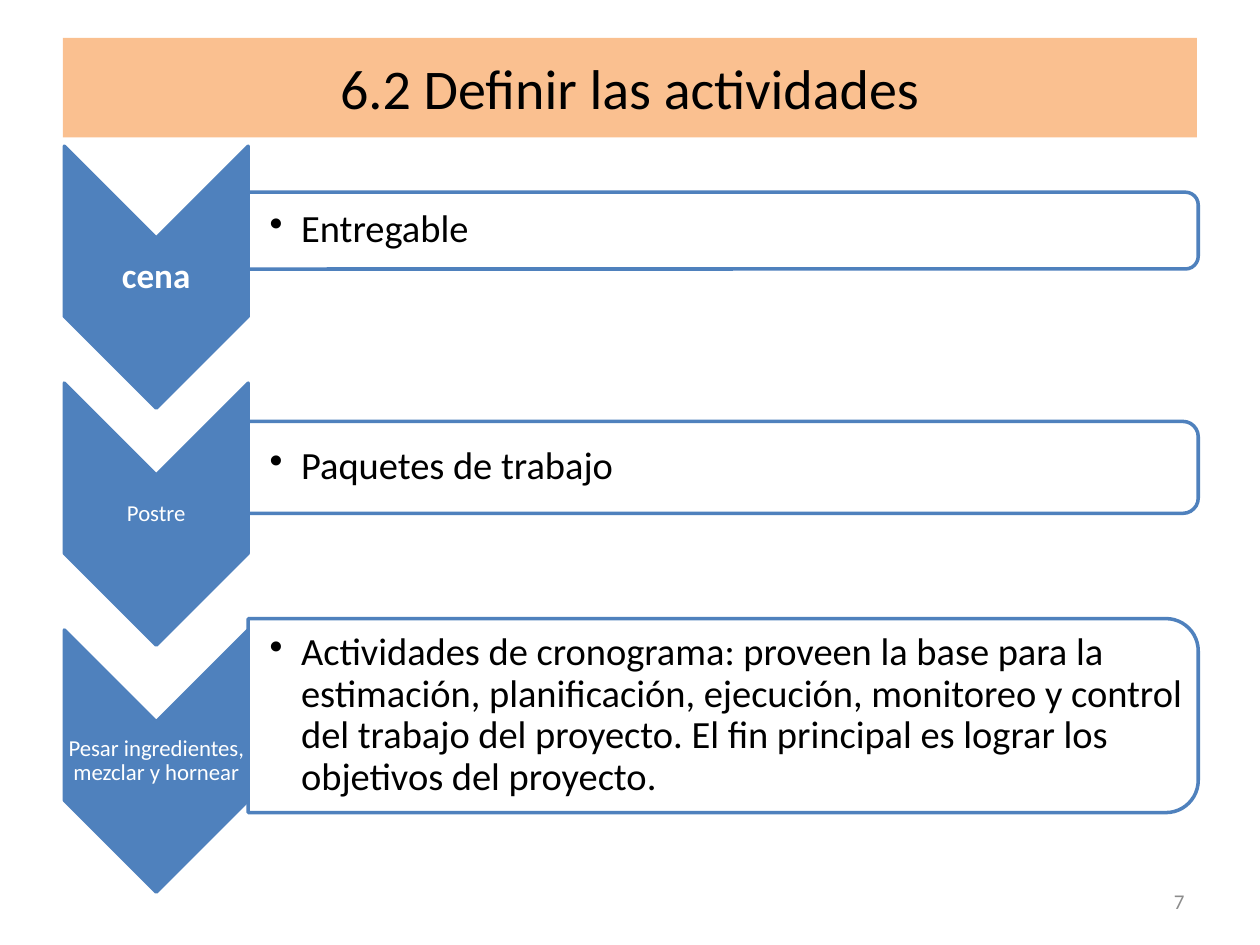
from lxml import etree
from pptx import Presentation
from pptx.dml.color import RGBColor
from pptx.enum import shapes, text
from pptx.oxml import ns
from pptx.util import Inches, Pt

BLUE = RGBColor(0x4F, 0x81, 0xBD)
PEACH = RGBColor(0xFA, 0xC0, 0x90)
WHITE = RGBColor(0xFF, 0xFF, 0xFF)
BLACK = RGBColor(0, 0, 0)
GRAY = RGBColor(0x8C, 0x8C, 0x8C)

TITLE = "6.2 Definir las actividades"
PAGE_NUMBER = "7"
# label, label size, bold, chevron centre, detail, panel centre, panel height, text width
STEPS = [
    ("cena", 20, True, 2.2, "Entregable", 1.83, 0.61, 7.51),
    ("Postre", 13, False, 4.08, "Paquetes de trabajo", 3.71, 0.73, 7.51),
    ("Pesar ingredientes, mezclar y hornear", 13, False, 6.04,
     "Actividades de cronograma: proveen la base para la estimación, planificación, "
     "ejecución, monitoreo y control del trabajo del proyecto. El fin principal es "
     "lograr los objetivos del proyecto.", 5.68, 1.54, 7.47),
]
LEFT, CHEVRON_WIDTH, CHEVRON_HEIGHT, LABEL_HEIGHT = 0.51, 1.46, 2.08, 0.62
PANEL_LEFT, PANEL_WIDTH = 1.97, 7.54


def add_turned(page, kind, left, middle, width, height, fill):
    """Add a shape turned a quarter clockwise that shows as width by height."""
    center = left + width / 2
    shape = page.shapes.add_shape(
        kind, Inches(center - height / 2), Inches(middle - width / 2),
        Inches(height), Inches(width))
    shape.rotation = 90
    shape.shadow.inherit = False
    shape.fill.solid()
    shape.fill.fore_color.rgb = fill
    shape.line.color.rgb = BLUE
    shape.line.width = Pt(2)
    return shape


def set_opacity(shape, percent):
    color = shape.fill._xPr.find(ns.qn("a:solidFill"))[0]
    etree.SubElement(color, ns.qn("a:alpha"), val=str(percent * 1000))


def write(box, words, size, color, align, bold=False, margins=None):
    frame = box.text_frame
    frame.word_wrap = True
    frame.vertical_anchor = text.MSO_ANCHOR.MIDDLE
    if margins:
        frame.margin_left = Inches(margins[0])
        frame.margin_top = frame.margin_right = frame.margin_bottom = Inches(margins[1])
    para = frame.paragraphs[0]
    para.text = words
    para.alignment = align
    para.font.name = "Calibri"
    para.font.size = Pt(size)
    para.font.bold = bold
    para.font.color.rgb = color
    return para


def add_text(page, left, middle, width, height, *style, **options):
    box = page.shapes.add_textbox(
        Inches(left), Inches(middle - height / 2), Inches(width), Inches(height))
    return write(box, *style, **options)


def add_bullet(para):
    properties = para._p.get_or_add_pPr()
    properties.set("marL", str(Inches(0.25)))
    properties.set("indent", str(-Inches(0.25)))
    bullet = etree.Element(ns.qn("a:buChar"), char="•")
    properties.find(ns.qn("a:defRPr")).addprevious(bullet)


def add_step(page, label, size, bold, middle, detail, panel_middle, panel_height, text_width):
    add_turned(page, shapes.MSO_SHAPE.CHEVRON, LEFT, middle,
               CHEVRON_WIDTH, CHEVRON_HEIGHT, BLUE)
    para = add_text(page, LEFT, middle, CHEVRON_WIDTH, LABEL_HEIGHT, label, size, WHITE,
                    text.PP_ALIGN.CENTER, bold=bold, margins=(0.01, 0.01))
    para.line_spacing = 0.9

    panel = add_turned(page, shapes.MSO_SHAPE.ROUND_2_SAME_RECTANGLE, PANEL_LEFT,
                       panel_middle, PANEL_WIDTH, panel_height, WHITE)
    set_opacity(panel, 90)
    para = add_text(page, PANEL_LEFT, panel_middle, text_width, panel_height * 0.9, detail,
                    22, BLACK, text.PP_ALIGN.LEFT, margins=(0.17, 0.02))
    para.line_spacing = 0.9
    add_bullet(para)


def main():
    deck = Presentation()
    deck.slide_width, deck.slide_height = Inches(10), Inches(7.5)
    page = deck.slides.add_slide(deck.slide_layouts[6])
    for step in STEPS:
        add_step(page, *step)
    add_text(page, 7.17, 7.15, 2.33, 0.4, PAGE_NUMBER, 12, GRAY, text.PP_ALIGN.RIGHT)

    banner = page.shapes.add_shape(
        shapes.MSO_SHAPE.RECTANGLE, Inches(0.5), Inches(0.3), Inches(9), Inches(0.79))
    banner.shadow.inherit = False
    banner.fill.solid()
    banner.fill.fore_color.rgb = PEACH
    banner.line.fill.background()
    write(banner, TITLE, 32, BLACK, text.PP_ALIGN.CENTER)
    deck.save("out.pptx")


if __name__ == "__main__":
    main()
